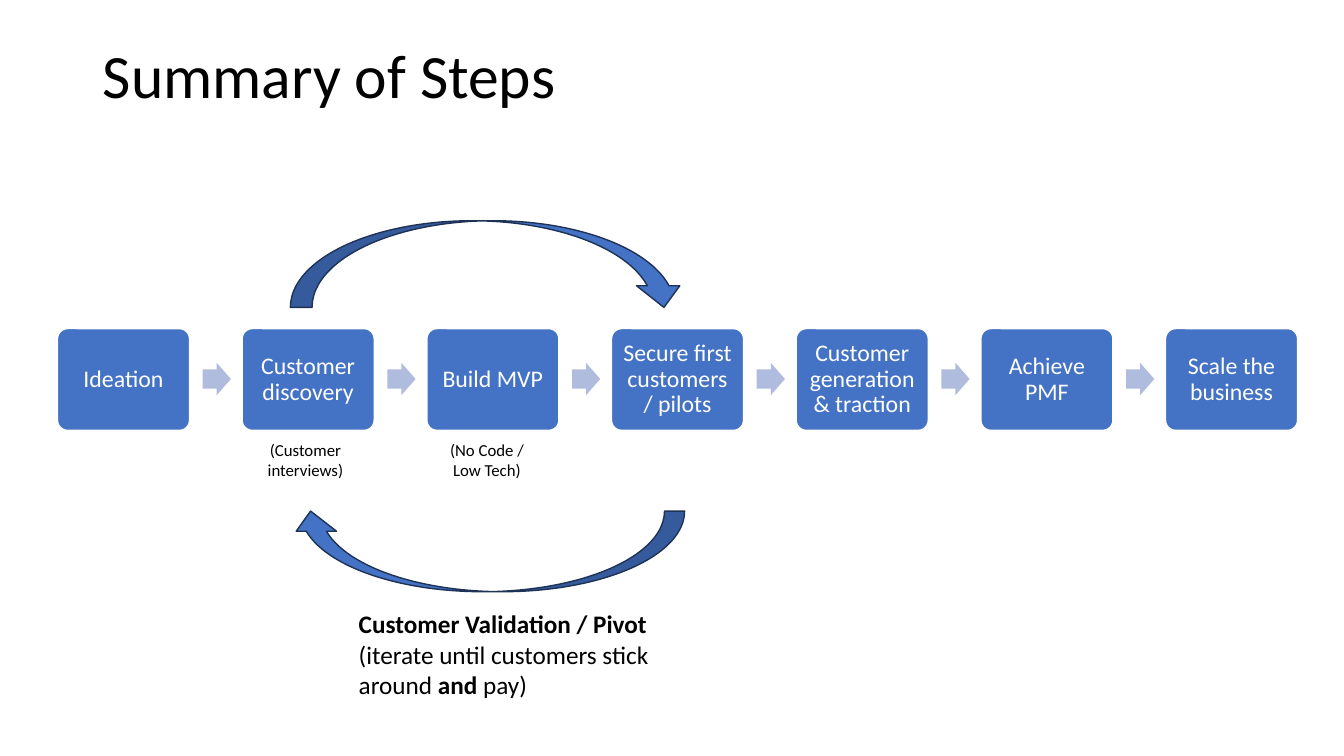
"""Build the slide that sums up the steps from ideation to scale."""
from dataclasses import dataclass

from pptx import Presentation
from pptx import util as u
from pptx.dml.color import RGBColor
from pptx.enum import shapes, text


@dataclass(frozen=True)
class Theme:
    font: str = "Calibri"
    ink: str = "000000"
    paper: str = "FFFFFF"
    step: str = "4472C4"
    link: str = "B0BCDE"
    edge: str = "1E3256"
    title: int = 44
    body: int = 18
    label: int = 17
    note: int = 12


class StepSlide:
    def __init__(self, deck, theme):
        self.theme = theme
        self.page = deck.slides.add_slide(deck.slide_layouts[5])

    def fill_text(self, box, paragraphs, size, color, align, inset=None, **spacing):
        frame = box.text_frame
        formats = {"word_wrap": True, "auto_size": text.MSO_AUTO_SIZE.NONE}
        if inset is not None:
            sides = ("left", "top", "right", "bottom")
            formats |= {f"margin_{side}": u.Inches(inset) for side in sides}
        for name, value in formats.items():
            setattr(frame, name, value)
        for index, spans in enumerate(paragraphs):
            para = frame.add_paragraph() if index else frame.paragraphs[0]
            for name, value in {"alignment": align, **spacing}.items():
                setattr(para, name, value)
            for words, bold in spans:
                for number, line in enumerate(words.split("\n")):
                    if number:
                        para.add_line_break()
                    span = para.add_run()
                    span.text = line
                    font = {"name": self.theme.font, "size": u.Pt(size), "bold": bold}
                    for name, value in font.items():
                        setattr(span.font, name, value)
                    span.font.color.rgb = RGBColor.from_string(color)

    def title(self, words, *place):
        box = self.page.shapes.title
        for name, value in zip(("left", "top", "width", "height"), place):
            setattr(box, name, u.Inches(value))
        box.text_frame.vertical_anchor = text.MSO_ANCHOR.MIDDLE
        self.fill_text(box, [[(words, False)]], self.theme.title, self.theme.ink,
                       text.PP_ALIGN.LEFT, line_spacing=0.9)

    def shape(self, kind, place, fill, line=None, adjustments=(), rotation=0):
        box = self.page.shapes.add_shape(kind, *map(u.Inches, place))
        box.shadow.inherit = False
        box.rotation = rotation
        box.fill.solid()
        box.fill.fore_color.rgb = RGBColor.from_string(fill)
        if line:
            box.line.color.rgb = RGBColor.from_string(line)
            box.line.width = u.Pt(1)
        else:
            box.line.fill.background()
        for index, value in enumerate(adjustments):
            box.adjustments[index] = value
        return box

    def step(self, words, *place):
        box = self.shape(shapes.MSO_SHAPE.ROUNDED_RECTANGLE, place, self.theme.step,
                         self.theme.paper, [0.1])
        box.text_frame.vertical_anchor = text.MSO_ANCHOR.MIDDLE
        self.fill_text(box, [[(words, False)]], self.theme.label, self.theme.paper,
                       text.PP_ALIGN.CENTER, inset=0.07, line_spacing=0.9)

    def link(self, *place):
        self.shape(shapes.MSO_SHAPE.RIGHT_ARROW, place, self.theme.link,
                   adjustments=[0.6, 0.5])

    def loop(self, *place, rotation=0):
        self.shape(shapes.MSO_SHAPE.CURVED_DOWN_ARROW, place, self.theme.step,
                   self.theme.edge, rotation=rotation)

    def note(self, paragraphs, place, size, align):
        box = self.page.shapes.add_textbox(*map(u.Inches, place))
        self.fill_text(box, paragraphs, size, self.theme.ink, align)


STEPS = ["Ideation", "Customer\ndiscovery", "Build MVP",
         "Secure first customers / pilots", "Customer generation & traction",
         "Achieve PMF", "Scale the business"]
NOTES = [("(Customer interviews)", 2.48), ("(No Code / Low Tech)", 4.28)]
VALIDATION = [
    [("Customer Validation / Pivot", True)],
    [("(iterate until customers stick around ", False), ("and", True), (" pay)", False)],
]


def main():
    deck = Presentation()
    deck.slide_width, deck.slide_height = u.Inches(13.33), u.Inches(7.5)
    theme = Theme()
    slide = StepSlide(deck, theme)
    slide.title("Summary of Steps", 0.92, 0.31, 11.5, 0.94)

    first, last = 0.57, 11.56
    pitch = (last - first) / (len(STEPS) - 1)
    for index, words in enumerate(STEPS):
        left = first + index * pitch
        slide.step(words, left, 3.26, 1.31, 1.01)
        if index < len(STEPS) - 1:
            slide.link(left + 1.44, 3.6, 0.28, 0.32)

    for words, left in NOTES:
        slide.note([[(words, False)]], (left, 4.31, 1.1, 0.5), theme.note,
                   text.PP_ALIGN.CENTER)
    slide.loop(2.88, 5.07, 3.91, 0.8, rotation=180)
    slide.note(VALIDATION, (3.46, 5.99, 3.3, 1.01), theme.body, text.PP_ALIGN.LEFT)
    slide.loop(2.88, 2.19, 3.92, 0.86)
    deck.save("out.pptx")


if __name__ == "__main__":
    main()
